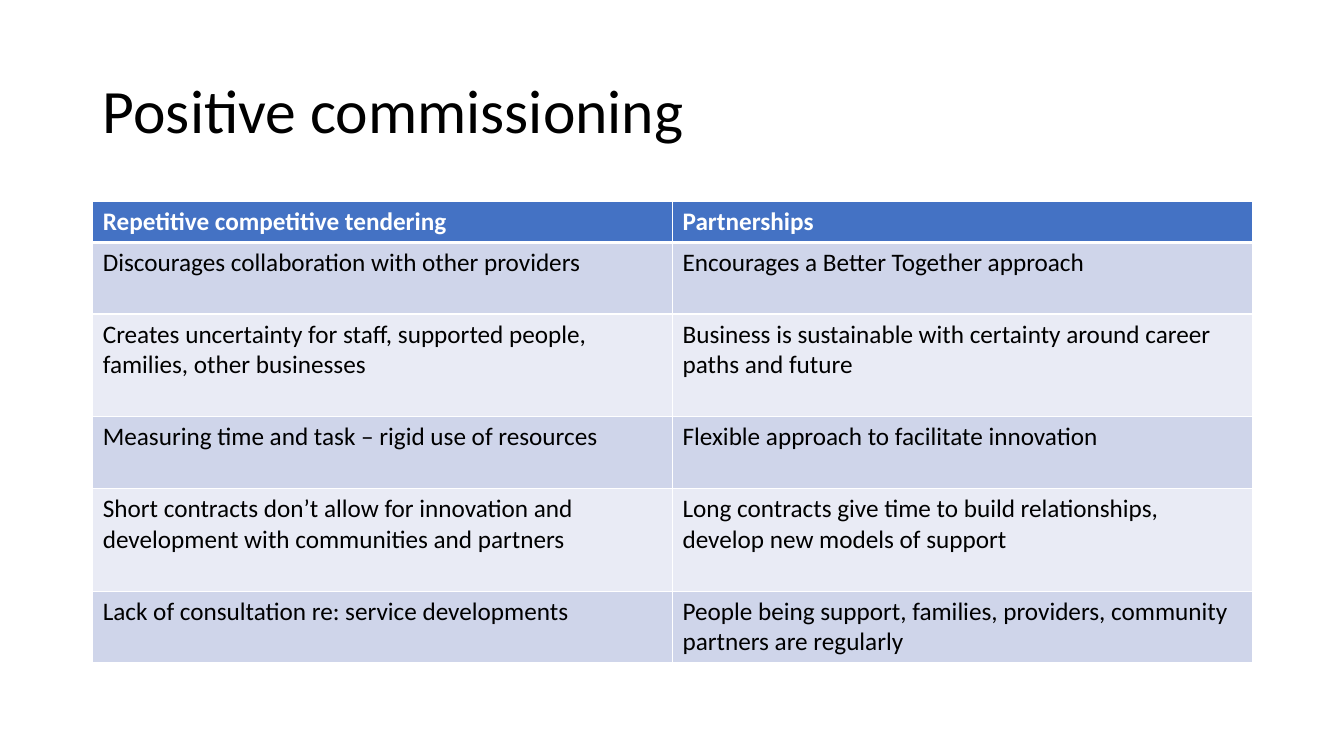
from dataclasses import dataclass

import lxml.etree
import pptx
import pptx.dml.color
import pptx.enum.text
import pptx.oxml.ns
import pptx.util

Inches = pptx.util.Inches
Pt = pptx.util.Pt
Color = pptx.dml.color.RGBColor.from_string


@dataclass(frozen=True)
class Theme:
    font: str = "Calibri"
    title_size: int = 44
    table_size: int = 18
    text: str = "000000"
    header_text: str = "FFFFFF"
    header_fill: str = "4472C4"
    band_fills: tuple = ("CFD5EA", "E9EBF5")
    border: str = "FFFFFF"
    border_width: int = 1
    header_border_width: int = 3


THEME = Theme()
TITLE = "Positive commissioning"
COMPARISON = [
    ("Repetitive competitive tendering", "Partnerships"),
    ("Discourages collaboration with other providers",
     "Encourages a Better Together approach"),
    ("Creates uncertainty for staff, supported people, families, other businesses",
     "Business is sustainable with certainty around career paths and future"),
    ("Measuring time and task – rigid use of resources",
     "Flexible approach to facilitate innovation"),
    ("Short contracts don’t allow for innovation and development with communities and partners",
     "Long contracts give time to build relationships, develop new models of support"),
    ("Lack of consultation re: service developments",
     "People being support, families, providers, community partners are regularly"),
]
ROW_HEIGHTS = [0.4, 0.71, 1.02, 0.71, 1.02, 0.71]


def format_text(paragraph, size, color, bold=False):
    for run in paragraph.runs:
        run.font.name = THEME.font
        run.font.size = Pt(size)
        run.font.bold = bold
        run.font.color.rgb = Color(color)


def set_borders(cell, top_width, bottom_width):
    qualified = pptx.oxml.ns.qn
    properties = cell._tc.get_or_add_tcPr()
    widths = {
        "a:lnL": THEME.border_width,
        "a:lnR": THEME.border_width,
        "a:lnT": top_width,
        "a:lnB": bottom_width,
    }
    for position, (tag, width) in enumerate(widths.items()):
        line = lxml.etree.Element(qualified(tag), w=str(Pt(width)))
        fill = lxml.etree.SubElement(line, qualified("a:solidFill"))
        lxml.etree.SubElement(fill, qualified("a:srgbClr"), val=THEME.border)
        properties.insert(position, line)


def add_title(slide, left, top, width, height):
    title = slide.shapes.title
    title.left, title.top = Inches(left), Inches(top)
    title.width, title.height = Inches(width), Inches(height)
    text_frame = title.text_frame
    text_frame.text = TITLE
    text_frame.word_wrap = True
    text_frame.vertical_anchor = pptx.enum.text.MSO_ANCHOR.MIDDLE
    paragraph = text_frame.paragraphs[0]
    paragraph.alignment = pptx.enum.text.PP_ALIGN.LEFT
    paragraph.line_spacing = 0.9
    format_text(paragraph, THEME.title_size, THEME.text)


def format_cell(cell, text, row_index):
    is_header = row_index == 0
    cell.text_frame.text = text
    format_text(
        cell.text_frame.paragraphs[0],
        THEME.table_size,
        THEME.header_text if is_header else THEME.text,
        is_header,
    )
    cell.fill.solid()
    band = THEME.band_fills[(row_index - 1) % 2]
    cell.fill.fore_color.rgb = Color(THEME.header_fill if is_header else band)
    set_borders(
        cell,
        THEME.header_border_width if row_index == 1 else THEME.border_width,
        THEME.header_border_width if is_header else THEME.border_width,
    )


def add_comparison_table(slide, left, top, width):
    column_count = len(COMPARISON[0])
    table = slide.shapes.add_table(
        len(COMPARISON), column_count,
        Inches(left), Inches(top), Inches(width), Inches(sum(ROW_HEIGHTS)),
    ).table
    for column in table.columns:
        column.width = Inches(width / column_count)
    for row_index, (texts, height) in enumerate(zip(COMPARISON, ROW_HEIGHTS)):
        table.rows[row_index].height = Inches(height)
        for column_index, text in enumerate(texts):
            format_cell(table.cell(row_index, column_index), text, row_index)


def main():
    presentation = pptx.Presentation()
    presentation.slide_width = Inches(13.33)
    presentation.slide_height = Inches(7.5)
    slide = presentation.slides.add_slide(presentation.slide_layouts[5])
    add_title(slide, 0.92, 0.4, 11.5, 1.45)
    add_comparison_table(slide, 0.92, 2, 11.5)
    presentation.save("out.pptx")


if __name__ == "__main__":
    main()
